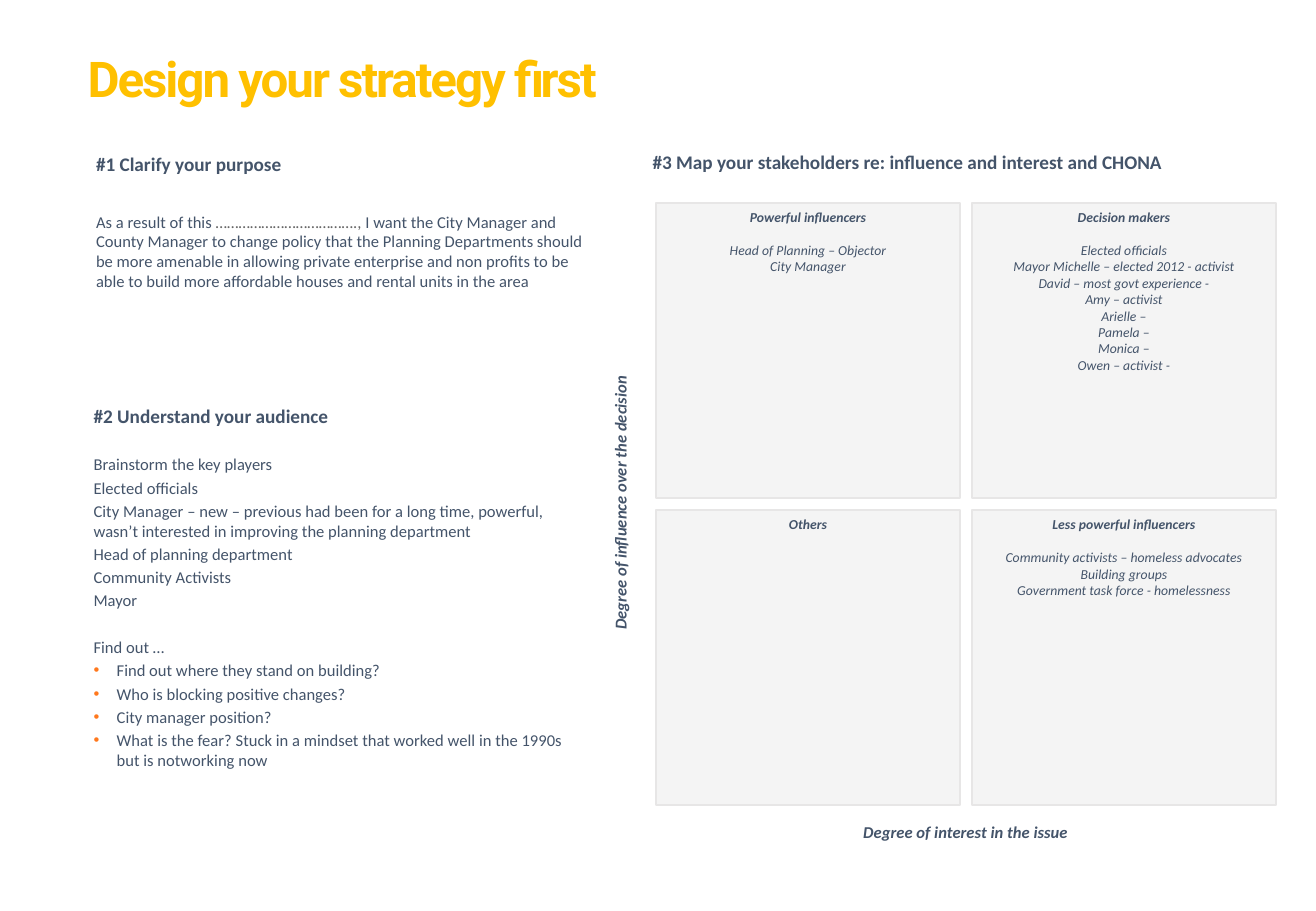
from dataclasses import dataclass

from lxml import etree
from pptx import Presentation
from pptx.dml.color import RGBColor
from pptx.enum.shapes import MSO_SHAPE
from pptx.enum.text import MSO_ANCHOR, MSO_AUTO_SIZE, PP_ALIGN
from pptx.oxml.ns import qn
from pptx.util import Inches, Pt

RECT = MSO_SHAPE.RECTANGLE
TOP, MIDDLE = MSO_ANCHOR.TOP, MSO_ANCHOR.MIDDLE
LEFT, CENTER = PP_ALIGN.LEFT, PP_ALIGN.CENTER
NO_FIT = MSO_AUTO_SIZE.NONE

SLATE, GREY, AMBER, ORANGE, SILVER = "44546A", "666666", "FFC000", "FF781D", "E7E6E6"
HEADING, BODY, SMALL = 11.4, 9.8, 8.1
LINE_GAP, SECTION_GAP = 2, 15.9


@dataclass(frozen=True)
class Quadrant:
    col: int
    row: int
    title: str
    people: tuple[str, ...] = ()


@dataclass(frozen=True)
class Label:
    text: str
    left: float
    top: float
    width: float
    height: float
    size: float = BODY
    italic: bool = True
    align: PP_ALIGN = CENTER
    rotation: int = 0


@dataclass(frozen=True)
class Line:
    text: str
    before: float = LINE_GAP
    bullet: bool = False


QUADRANTS = (
    Quadrant(0, 0, "Powerful influencers", ("Head of Planning – Objector", "City Manager")),
    Quadrant(1, 0, "Decision makers", (
        "Elected officials",
        "Mayor Michelle – elected 2012 - activist",
        "David – most govt experience -",
        "Amy – activist",
        "Arielle –",
        "Pamela –",
        "Monica –",
        "Owen – activist -",
    )),
    Quadrant(0, 1, "Others"),
    Quadrant(1, 1, "Less powerful influencers", (
        "Community activists – homeless advocates",
        "Building groups",
        "Government task force - homelessness",
    )),
)

LABELS = (
    Label("Degree of interest in the issue", 5.4, 6.73, 5.09, 0.4),
    Label("Degree of influence over the decision", 2.72, 3.93, 4.94, 0.42, rotation=270),
    Label("#3 Map your stakeholders re: influence and interest and CHONA",
          5.29, 1.2, 5.51, 0.35, size=HEADING, italic=False, align=LEFT),
)

AUDIENCE = (
    Line("Brainstorm the key players", SECTION_GAP),
    Line("Elected officials"),
    Line("City Manager – new – previous had been for a long time, powerful, "
         "wasn’t interested in improving the planning department"),
    Line("Head of planning department"),
    Line("Community Activists"),
    Line("Mayor"),
    Line("Find out …", SECTION_GAP),
    Line("Find out where they stand on building?", bullet=True),
    Line("Who is blocking positive changes?", bullet=True),
    Line("City manager position?", bullet=True),
    Line("What is the fear? Stuck in a mindset that worked well in the 1990s "
         "but is notworking now", bullet=True),
)


def rgb(color: str) -> RGBColor:
    return RGBColor.from_string(color)


def add_run(p, text: str, *, size: float = BODY, color: str = SLATE, bold: bool = False,
            italic: bool = False, font: str = "Calibri"):
    r = p.add_run()
    r.text = text
    r.font.name, r.font.size = font, Pt(size)
    r.font.bold, r.font.italic = bold, italic
    r.font.color.rgb = rgb(color)
    return r


def add_par(tf, *, align: PP_ALIGN = LEFT, before: float = 0, after: float = 0,
            bullet: bool = False):
    first = tf.paragraphs[0]
    p = tf.add_paragraph() if first.runs else first
    p.alignment = align
    p.space_before, p.space_after = Pt(before), Pt(after)
    pPr = p._p.get_or_add_pPr()
    indent = Inches(0.19) if bullet else 0
    pPr.set("marL", str(indent))
    pPr.set("indent", str(-indent))
    if bullet:
        clr = etree.SubElement(pPr, qn("a:buClr"))
        etree.SubElement(clr, qn("a:srgbClr"), val=ORANGE)
        etree.SubElement(pPr, qn("a:buFont"), typeface="Arial")
        etree.SubElement(pPr, qn("a:buChar"), char="•")
    else:
        etree.SubElement(pPr, qn("a:buNone"))
    return p


def place(sp, left: float, top: float, width: float, height: float) -> None:
    sp.left, sp.top = Inches(left), Inches(top)
    sp.width, sp.height = Inches(width), Inches(height)


def set_frame(tf, anchor: MSO_ANCHOR = TOP, x: float = 0.1, y: float = 0.05):
    tf.word_wrap, tf.auto_size, tf.vertical_anchor = True, NO_FIT, anchor
    tf.margin_left = tf.margin_right = Inches(x)
    tf.margin_top = tf.margin_bottom = Inches(y)
    return tf


def add_box(s, left: float, top: float, width: float, height: float, rotation: int = 0):
    sp = s.shapes.add_textbox(Inches(left), Inches(top), Inches(width), Inches(height))
    sp.rotation = rotation
    return set_frame(sp.text_frame, x=0.08, y=0.04)


def add_title(s) -> None:
    sp = s.shapes.title
    place(sp, 0.62, 0.26, 9.48, 0.82)
    p = add_par(set_frame(sp.text_frame, MIDDLE))
    p.line_spacing = 0.9
    r = add_run(p, "Design your strategy first", size=29.2, color=AMBER, bold=True, font="Roboto")
    r.font._element.set("spc", "-120")


def add_purpose(s) -> None:
    sp = s.placeholders[1]
    place(sp, 0.69, 1.2, 4.34, 1.46)
    tf = set_frame(sp.text_frame)
    add_run(add_par(tf, after=21.7), "#1 Clarify your purpose", size=HEADING, bold=True)
    p = add_par(tf, after=4.9)
    add_run(p, "As a result of this ")
    add_run(p, "……………………………….,", color=GREY)
    add_run(p, " I want the City Manager and County Manager to change policy that the "
               "Planning Departments should be more amenable in allowing private enterprise "
               "and non profits to be able to build more affordable houses and rental units "
               "in the area")


def add_audience(s) -> None:
    tf = add_box(s, 0.69, 3.29, 4.19, 3.43)
    add_run(add_par(tf), "#2 Understand your audience", size=HEADING, bold=True)
    for line in AUDIENCE:
        add_run(add_par(tf, before=line.before, bullet=line.bullet), line.text)


def add_quadrant(s, q: Quadrant) -> None:
    sp = s.shapes.add_shape(RECT, Inches(5.4 + 2.6 * q.col), Inches(1.67 + 2.53 * q.row),
                            Inches(2.5), Inches(2.43))
    sp.shadow.inherit = False
    sp.fill.solid()
    sp.fill.fore_color.rgb = rgb(SILVER)
    clr = sp._element.spPr.find(qn("a:solidFill")).find(qn("a:srgbClr"))
    etree.SubElement(clr, qn("a:alpha"), val="43000")
    sp.line.color.rgb = rgb(SILVER)
    sp.line.width = Pt(1.5)
    tf = set_frame(sp.text_frame)
    add_run(add_par(tf, align=CENTER), q.title, size=SMALL, bold=True, italic=True)
    for i, person in enumerate(q.people):
        p = add_par(tf, align=CENTER, before=0 if i else 9.9)
        add_run(p, person, size=SMALL, italic=True)


def add_label(s, label: Label) -> None:
    tf = add_box(s, label.left, label.top, label.width, label.height, label.rotation)
    add_run(add_par(tf, align=label.align), label.text, size=label.size, bold=True,
            italic=label.italic)


def main() -> None:
    prs = Presentation()
    prs.slide_width, prs.slide_height = Inches(10.83), Inches(7.5)
    s = prs.slides.add_slide(prs.slide_layouts[1])
    add_title(s)
    add_purpose(s)
    add_audience(s)
    for q in QUADRANTS:
        add_quadrant(s, q)
    for label in LABELS:
        add_label(s, label)
    prs.save("out.pptx")


if __name__ == "__main__":
    main()
